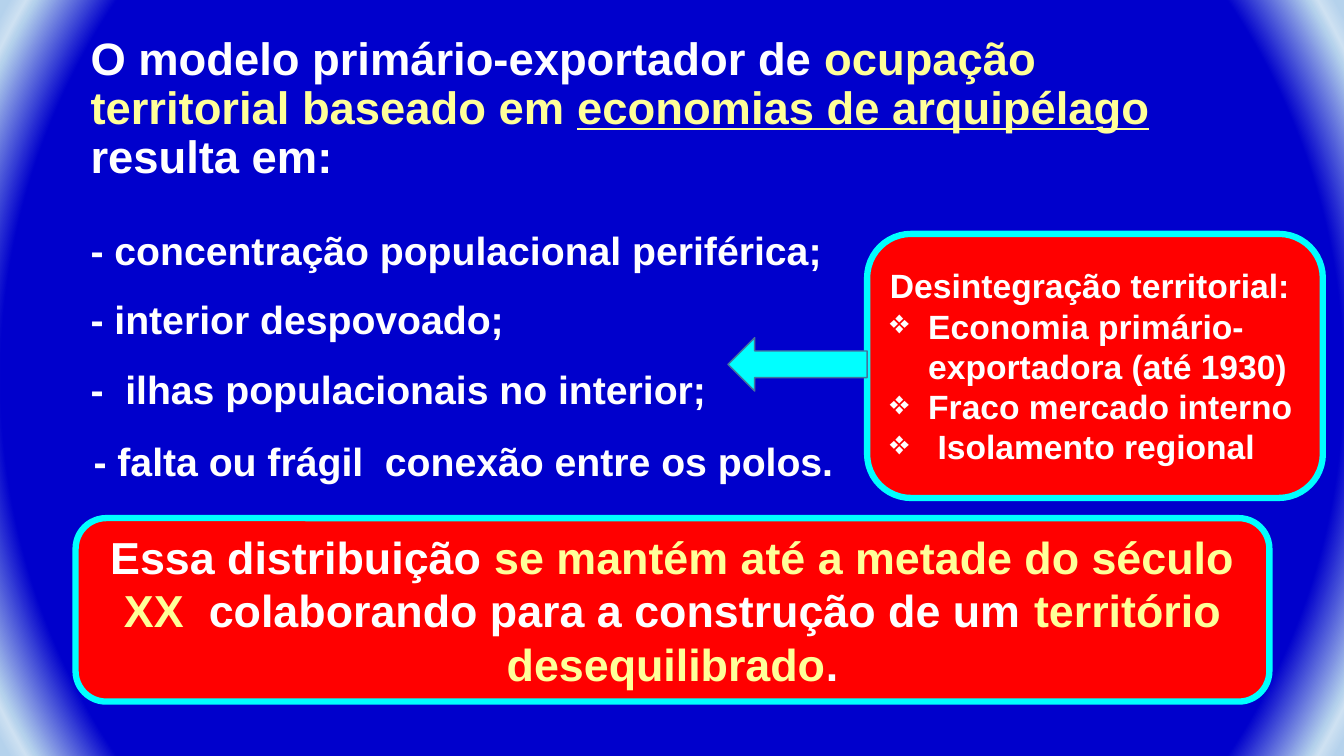
from dataclasses import dataclass

import pptx
import pptx.dml.color
import pptx.enum.shapes
import pptx.enum.text
import pptx.oxml
import pptx.oxml.ns
import pptx.util
from pptx.util import Inches

ANCHOR = pptx.enum.text.MSO_ANCHOR
ALIGN = pptx.enum.text.PP_ALIGN
SHAPE = pptx.enum.shapes.MSO_SHAPE


@dataclass(frozen=True)
class Theme:
    font: str = "Arial"
    white: str = "FFFFFF"
    yellow: str = "FFFF99"
    red: str = "FF0000"
    cyan: str = "00FFFF"
    steel: str = "43739E"
    glow: tuple = ((87, "0000CC"), (96, "B5D2EC"), (97, "CEE1F2"), (99, "B5D2EC"))
    title: float = 32.4
    conclusion: float = 32
    item: float = 28
    cause: float = 24


THEME = Theme()


@dataclass(frozen=True)
class Run:
    text: str
    color: str = THEME.white
    underline: bool = False


@dataclass(frozen=True)
class Para:
    runs: tuple[Run, ...]
    bullet: bool = False


@dataclass(frozen=True)
class Box:
    left: float
    top: float
    width: float
    height: float
    size: float
    paras: tuple[Para, ...]
    anchor: ANCHOR = ANCHOR.TOP
    align: ALIGN = ALIGN.LEFT
    spacing: float = 1.0

    def bounds(self) -> list[int]:
        return [Inches(v) for v in (self.left, self.top, self.width, self.height)]


ITEMS = (
    (0.8, 2.25, "- concentração populacional periférica;"),
    (0.8, 2.93, "- interior despovoado;"),
    (0.8, 3.63, "-  ilhas populacionais no interior;"),
    (0.83, 4.34, "- falta ou frágil  conexão entre os polos."),
)

TEXTS = (
    Box(0.8, 0.64, 11.63, 0.89, THEME.title, (Para((
        Run("O modelo primário-exportador de "),
        Run("ocupação territorial baseado em ", THEME.yellow),
        Run("economias de arquipélago ", THEME.yellow, True),
        Run("resulta em:"),
    )),), anchor=ANCHOR.MIDDLE, spacing=0.9),
    *(Box(left, top, 8.13, 0.53, THEME.item, (Para((Run(text),)),), spacing=0.9)
      for left, top, text in ITEMS),
)

CAUSES = (
    "Economia primário-exportadora (até 1930)",
    "Fraco mercado interno",
    " Isolamento regional",
)

PANELS = (
    Box(0.75, 5.14, 11.84, 1.82, THEME.conclusion, (Para((
        Run("Essa distribuição "),
        Run("se mantém até a metade do século XX  ", THEME.yellow),
        Run("colaborando para a construção de um "),
        Run("território desequilibrado", THEME.yellow),
        Run("."),
    )),), anchor=ANCHOR.MIDDLE, align=ALIGN.CENTER),
    Box(8.6, 2.32, 4.52, 2.62, THEME.cause, (
        Para((Run("Desintegração territorial:"),)),
        *(Para((Run(cause),), bullet=True) for cause in CAUSES),
    ), anchor=ANCHOR.MIDDLE),
)


def rgb(color: str) -> pptx.dml.color.RGBColor:
    return pptx.dml.color.RGBColor.from_string(color)


def apply(target: object, values: dict) -> None:
    for name, value in values.items():
        setattr(target, name, value)


def add_bullet(p) -> None:
    pPr = p._p.get_or_add_pPr()
    pPr.set("marL", str(Inches(0.38)))
    pPr.set("indent", str(-Inches(0.38)))
    bullet = pptx.oxml.parse_xml(
        f'<a:buChar {pptx.oxml.ns.nsdecls("a")} char="❖"/>')
    pPr.append(bullet)


def write(tf, box: Box) -> None:
    apply(tf, {"word_wrap": True, "vertical_anchor": box.anchor})
    for i, para in enumerate(box.paras):
        p = tf.add_paragraph() if i else tf.paragraphs[0]
        apply(p, {"alignment": box.align, "line_spacing": box.spacing})
        if para.bullet:
            add_bullet(p)
        for run in para.runs:
            r = p.add_run()
            r.text = run.text
            apply(r.font, {"name": THEME.font, "size": pptx.util.Pt(box.size),
                           "bold": True, "underline": run.underline})
            r.font.color.rgb = rgb(run.color)


def add_filled(s, kind: SHAPE, bounds: list[int], fill: str, line: str, weight: float):
    sp = s.shapes.add_shape(kind, *bounds)
    sp.shadow.inherit = False
    sp.fill.solid()
    sp.fill.fore_color.rgb = rgb(fill)
    sp.line.color.rgb = rgb(line)
    sp.line.width = pptx.util.Pt(weight)
    return sp


def paint_background(s) -> None:
    s.background.fill.gradient()
    old = next(s._element.iter(pptx.oxml.ns.qn("a:gradFill")))
    stops = "".join(f'<a:gs pos="{pos * 1000}"><a:srgbClr val="{color}"/></a:gs>'
                    for pos, color in THEME.glow)
    new = pptx.oxml.parse_xml(
        f'<a:gradFill {pptx.oxml.ns.nsdecls("a")} rotWithShape="1">'
        f'<a:gsLst>{stops}</a:gsLst><a:path path="circle">'
        '<a:fillToRect l="50000" t="50000" r="50000" b="50000"/>'
        '</a:path></a:gradFill>')
    old.getparent().replace(old, new)


def main() -> None:
    prs = pptx.Presentation()
    apply(prs, {"slide_width": Inches(13.33), "slide_height": Inches(7.5)})
    s = prs.slides.add_slide(prs.slide_layouts[6])
    paint_background(s)
    for box in TEXTS:
        write(s.shapes.add_textbox(*box.bounds()).text_frame, box)
    for box in PANELS:
        sp = add_filled(s, SHAPE.ROUNDED_RECTANGLE, box.bounds(),
                        THEME.red, THEME.cyan, 4.5)
        write(sp.text_frame, box)
    arrow = [Inches(v) for v in (7.22, 3.35, 1.38, 0.53)]
    add_filled(s, SHAPE.LEFT_ARROW, arrow, THEME.cyan, THEME.steel, 1)
    prs.save("out.pptx")


if __name__ == "__main__":
    main()
